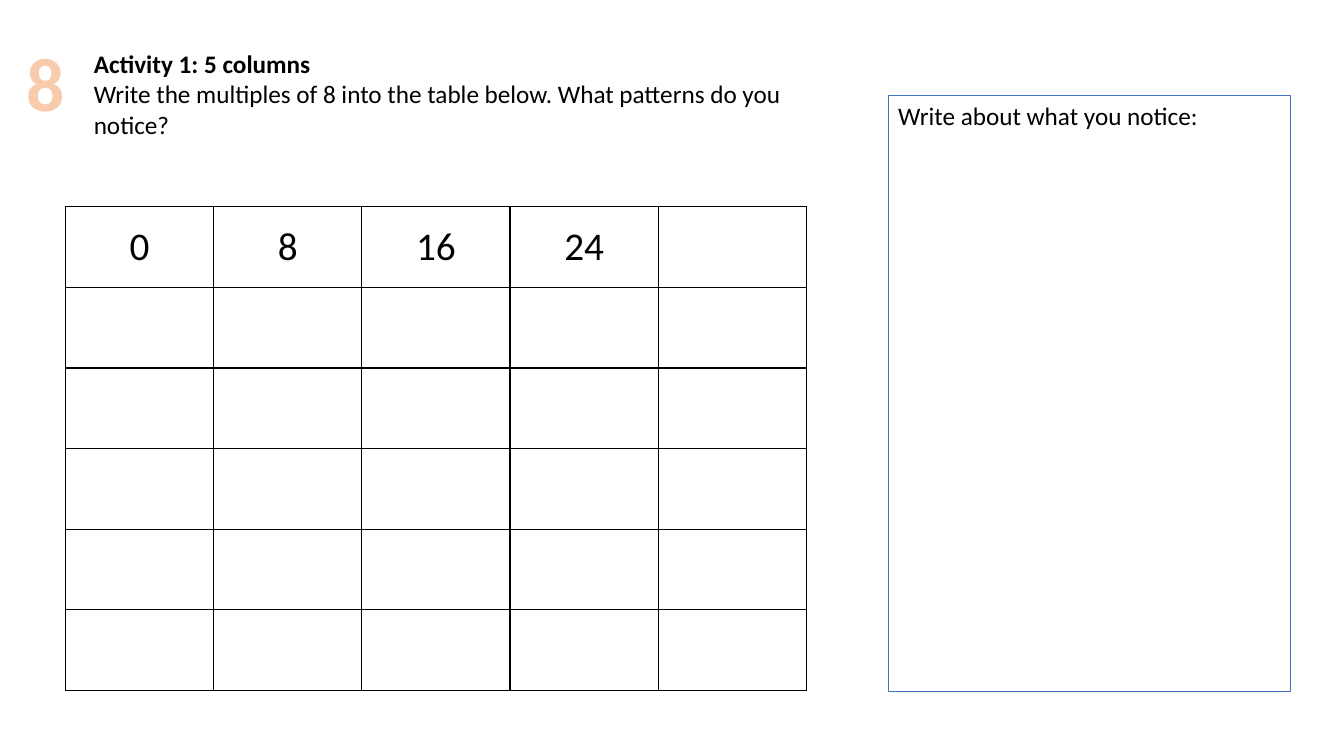
"""Builds a worksheet slide on the multiples of 8."""
import pptx
import pptx.dml.color
import pptx.enum.shapes
import pptx.enum.text
import pptx.oxml
import pptx.oxml.ns
import pptx.util

PX = 9144
BLACK, WHITE, BLUE, PEACH, ORANGE = "000000", "FFFFFF", "4472C4", "F8CBAD", "ED7D31"
ALIGN = pptx.enum.text.PP_ALIGN
ANCHOR = pptx.enum.text.MSO_ANCHOR


def px(*lengths):
    """Turn px into EMU."""
    return [length * PX for length in lengths]


def rgb(color):
    """Turn a hex string into a colour."""
    return pptx.dml.color.RGBColor.from_string(color)


def line_xml(tag, color, points):
    """Make a solid line element."""
    return pptx.oxml.parse_xml(
        f'<a:{tag} {pptx.oxml.ns.nsdecls("a")} w="{int(points * 12700)}">'
        f'<a:solidFill><a:srgbClr val="{color}"/></a:solidFill></a:{tag}>')


def write(tf, lines, size, color=BLACK, align=ALIGN.LEFT, anchor=ANCHOR.TOP):
    """Fill a text frame with (text, bold) lines."""
    tf.vertical_anchor = anchor
    for i, (text, bold) in enumerate(lines):
        p = tf.add_paragraph() if i else tf.paragraphs[0]
        p.text = text
        p.alignment = align
        for r in p.runs:
            r.font.name = "Calibri"
            r.font.size = pptx.util.Pt(size)
            r.font.bold = bold
            r.font.color.rgb = rgb(color)


def add_grid(s, left, top, width, height, rows, first_row):
    """Add a plain ruled table with its first row filled in."""
    table = s.shapes.add_table(rows, len(first_row), *px(left, top, width, height)).table
    for i, cell in enumerate(table.iter_cells()):
        cell.fill.background()
        text = first_row[i] if i < len(first_row) else ""
        write(cell.text_frame, [(text, False)], 28, align=ALIGN.CENTER)
        cell.vertical_anchor = ANCHOR.MIDDLE
        tc_pr = cell._tc.get_or_add_tcPr()
        for n, side in enumerate(("lnL", "lnR", "lnT", "lnB")):
            tc_pr.insert(n, line_xml(side, BLACK, 1))


def add_instructions(s, left, top, width, height, lines):
    """Place the title with the activity name and task."""
    sp = s.shapes.title
    sp.left, sp.top, sp.width, sp.height = px(left, top, width, height)
    sp.text_frame.word_wrap = True
    write(sp.text_frame, lines, 18)


def add_answer_box(s, left, top, width, height, prompt):
    """Add an outlined box with a prompt."""
    sp = s.shapes.add_shape(pptx.enum.shapes.MSO_SHAPE.RECTANGLE,
                            *px(left, top, width, height))
    sp.shadow.inherit = False
    sp.fill.background()
    sp.line.color.rgb = rgb(BLUE)
    sp.line.width = pptx.util.Pt(0.75)
    sp.text_frame.word_wrap = True
    write(sp.text_frame, [(prompt, False)], 18)


def add_big_number(s, left, top, width, height, number):
    """Add a large outlined number."""
    tf = s.shapes.add_textbox(*px(left, top, width, height)).text_frame
    tf.word_wrap = False
    write(tf, [(number, True)], 54, PEACH, ALIGN.CENTER)
    tf.paragraphs[0].runs[0].font._element.insert(0, line_xml("ln", ORANGE, 1.75))


def main():
    """Build and save the slide."""
    prs = pptx.Presentation()
    prs.slide_width, prs.slide_height = px(1333, 750)
    s = prs.slides.add_slide(prs.slide_layouts[5])
    s.background.fill.solid()
    s.background.fill.fore_color.rgb = rgb(WHITE)
    add_grid(s, 65, 205, 735, 480, 6, ["0", "8", "16", "24", ""])
    add_instructions(s, 83, 43, 722, 101, [
        ("Activity 1: 5 columns", True),
        ("Write the multiples of 8 into the table below. "
         "What patterns do you notice?", False)])
    add_answer_box(s, 881, 95, 399, 591, "Write about what you notice:")
    add_big_number(s, 16, 31, 59, 101, "8")
    prs.save("out.pptx")


if __name__ == "__main__":
    main()
